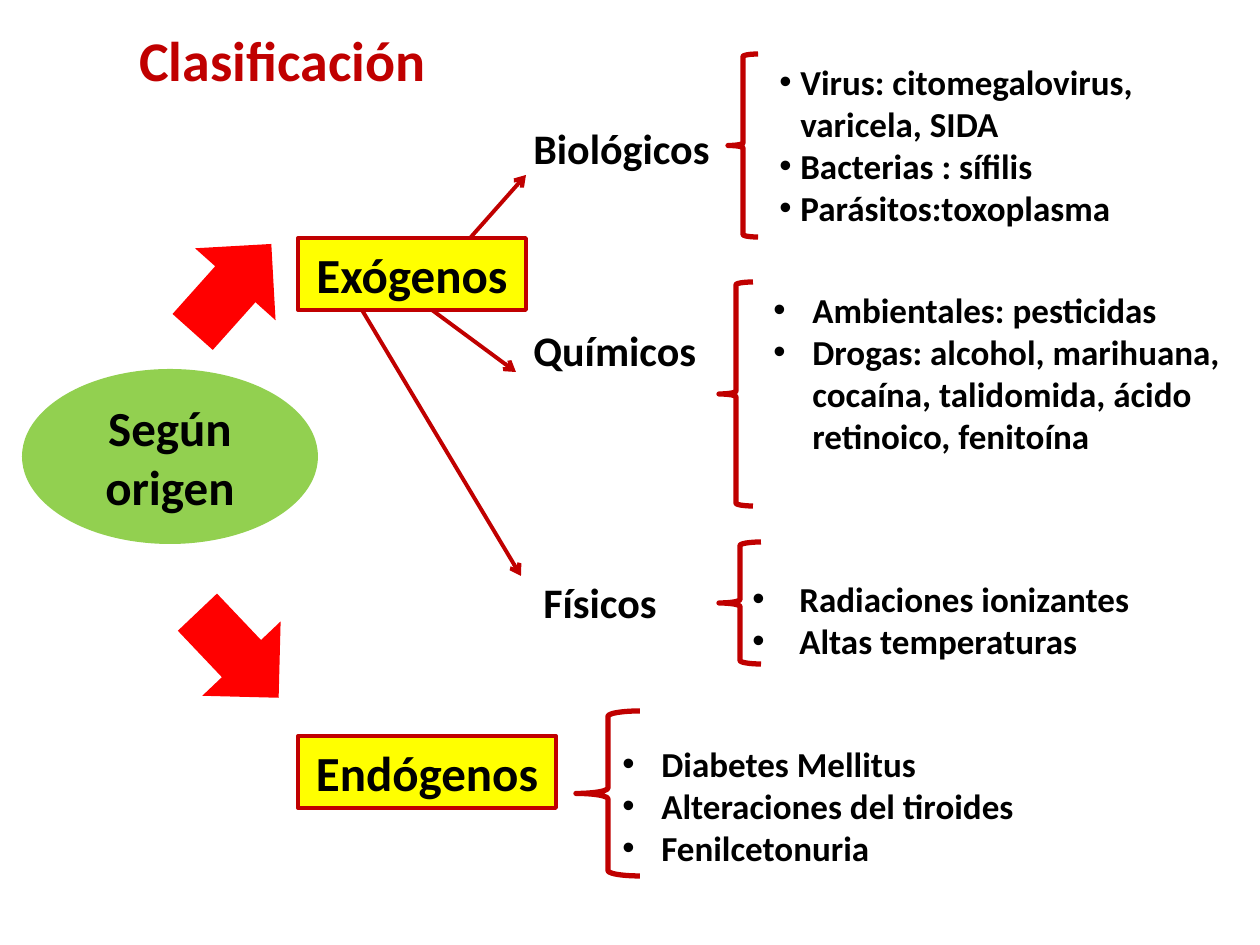
from lxml import etree
from pptx import Presentation
from pptx.dml.color import RGBColor
from pptx.enum.shapes import MSO_CONNECTOR, MSO_SHAPE
from pptx.enum.text import MSO_ANCHOR, MSO_AUTO_SIZE, PP_ALIGN
from pptx.oxml.ns import qn
from pptx.util import Emu, Pt

LEFT, CENTER = PP_ALIGN.LEFT, PP_ALIGN.CENTER
TOP, MIDDLE = MSO_ANCHOR.TOP, MSO_ANCHOR.MIDDLE
EMU_PER_PX = 914400 / 126
FONT = "Calibri"
BLACK, DARK_RED, RED = "000000", "C00000", "FF0000"
YELLOW, GREEN = "FFFF00", "92D050"

# Each box is left, top, width, height in px
CATEGORIES = [
    ("Biológicos", (521, 116, 220, 64)),
    ("Químicos", (521, 318, 220, 64)),
    ("Físicos", (531, 570, 220, 64)),
]

# brace box, list box, text indent, hanging width, items
DETAILS = [
    ((728, 54, 30, 183), (740, 54, 476, 183), 48, 21,
     ["Virus: citomegalovirus, varicela, SIDA", "Bacterias : sífilis",
      "Parásitos:toxoplasma"]),
    ((719, 282, 34, 224), (761, 282, 493, 183), 39, 39,
     ["Ambientales: pesticidas",
      "Drogas: alcohol, marihuana, cocaína, talidomida, ácido retinoico, fenitoína"]),
    ((719, 542, 42, 122), (740, 571, 475, 97), 47, 47,
     ["Radiaciones ionizantes", "Altas temperaturas"]),
    ((576, 711, 64, 165), (610, 736, 427, 140), 39, 39,
     ["Diabetes Mellitus", "Alteraciones del tiroides", "Fenilcetonuria"]),
]
CONNECTORS = [((471, 237), (526, 175)), ((432, 310), (516, 372)), ((362, 310), (521, 576))]
BLOCK_ARROWS = [((173, 234, 118, 108), -48.2), ((179, 601, 118, 108), 46.5)]


def px(value):
    return Emu(round(value * EMU_PER_PX))


def color(hex_value):
    return RGBColor.from_string(hex_value)


def write(shape, lines, size, font_color=BLACK, align=LEFT, anchor=TOP):
    frame = shape.text_frame
    frame.word_wrap = True
    frame.auto_size = MSO_AUTO_SIZE.NONE
    frame.vertical_anchor = anchor
    frame.text = "\n".join(lines)
    for paragraph in frame.paragraphs:
        paragraph.alignment = align
        paragraph.space_before = Pt(0)
        font = paragraph.font
        font.name, font.size, font.bold = FONT, Pt(size), True
        font.color.rgb = color(font_color)


def add_shape(slide, kind, box, fill=None, line=None, line_width=2.25):
    shape = slide.shapes.add_shape(kind, *map(px, box))
    shape.shadow.inherit = False
    if fill:
        shape.fill.solid()
        shape.fill.fore_color.rgb = color(fill)
    else:
        shape.fill.background()
    if line:
        shape.line.color.rgb = color(line)
        shape.line.width = Pt(line_width)
    else:
        shape.line.fill.background()
    return shape


def add_title(slide, box):
    title = slide.shapes.title
    title.left, title.top, title.width, title.height = map(px, box)
    write(title, ["Clasificación"], 32, DARK_RED, CENTER)


def add_origin(slide, box):
    ellipse = add_shape(slide, MSO_SHAPE.OVAL, box, GREEN)
    write(ellipse, ["Según origen"], 28, align=CENTER, anchor=MIDDLE)


def add_group(slide, text, box):
    rectangle = add_shape(slide, MSO_SHAPE.RECTANGLE, box, YELLOW, DARK_RED)
    write(rectangle, [text], 28, align=CENTER)


def add_block_arrow(slide, box, angle):
    arrow = add_shape(slide, MSO_SHAPE.RIGHT_ARROW, box, RED)
    arrow.rotation = angle


def add_connector(slide, start, end):
    connector = slide.shapes.add_connector(
        MSO_CONNECTOR.STRAIGHT, *map(px, start), *map(px, end))
    connector.line.color.rgb = color(DARK_RED)
    connector.line.width = Pt(2.25)
    line = connector.line._get_or_add_ln()
    etree.SubElement(line, qn("a:tailEnd"), type="arrow")
    etree.SubElement(connector._element.spPr, qn("a:effectLst"))


def add_category(slide, text, box):
    label = slide.shapes.add_textbox(*map(px, box))
    write(label, [text], 24)


def add_details(slide, brace_box, list_box, indent, hanging, items):
    add_shape(slide, MSO_SHAPE.LEFT_BRACE, brace_box, line=DARK_RED, line_width=3)
    text_box = slide.shapes.add_textbox(*map(px, list_box))
    write(text_box, items, 20)
    for paragraph in text_box.text_frame.paragraphs:
        properties = paragraph._p.get_or_add_pPr()
        properties.set("marL", str(px(indent)))
        properties.set("indent", str(-px(hanging)))
        bullet_font = etree.Element(qn("a:buFont"), typeface="Arial")
        bullet = etree.Element(qn("a:buChar"), char="•")
        # Bullets come before the default run properties
        run_defaults = properties.find(qn("a:defRPr"))
        run_defaults.addprevious(bullet_font)
        run_defaults.addprevious(bullet)


def main():
    presentation = Presentation()
    presentation.slide_width, presentation.slide_height = px(1260), px(945)
    slide = presentation.slides.add_slide(presentation.slide_layouts[5])

    # Title and root of the tree
    add_title(slide, (48, 19, 469, 81))
    add_origin(slide, (22, 369, 296, 175))

    # The two groups and the arrows that lead to them
    add_group(slide, "Exógenos", (298, 238, 228, 72))
    add_group(slide, "Endógenos", (298, 736, 258, 72))
    for box, angle in BLOCK_ARROWS:
        add_block_arrow(slide, box, angle)

    # Categories of the first group
    for start, end in CONNECTORS:
        add_connector(slide, start, end)
    for category in CATEGORIES:
        add_category(slide, *category)

    # Braces with their lists
    for details in DETAILS:
        add_details(slide, *details)

    presentation.save("out.pptx")


if __name__ == "__main__":
    main()
